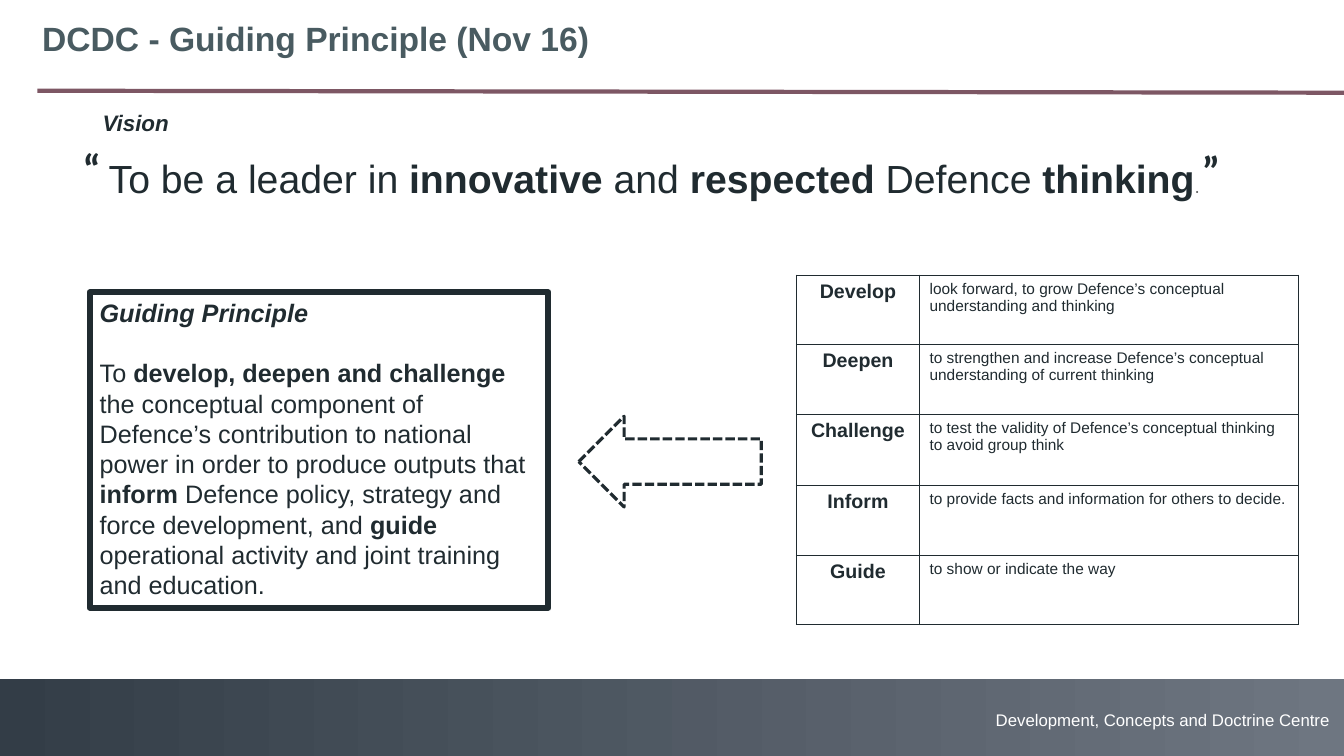
from dataclasses import dataclass

from lxml.etree import SubElement
from pptx import Presentation
from pptx.dml.color import RGBColor
from pptx.enum.dml import MSO_LINE
from pptx.enum.shapes import MSO_CONNECTOR, MSO_SHAPE
from pptx.enum.text import MSO_ANCHOR, PP_ALIGN
from pptx.oxml.ns import qn
from pptx.util import Emu, Pt


@dataclass(frozen=True)
class Theme:
    ink: str = "202B30"
    title: str = "495B61"
    rule: str = "7D5764"
    stop: str = "6D6D6D"
    band_left: str = "333D47"
    band_right: str = "6E7681"
    white: str = "FFFFFF"
    font: str = "Arial"
    quote_font: str = "Calibri"
    title_pt: float = 24
    vision_pt: float = 28
    stop_pt: float = 13.5
    quote_pt: float = 30
    label_pt: float = 16
    body_pt: float = 18
    term_pt: float = 14
    meaning_pt: float = 11
    footer_pt: float = 12


T = Theme()
PX = 9144  # 100 px to the inch

VISION = "To be a leader in **innovative** and **respected** Defence **thinking**"
PRINCIPLE = (
    "To **develop, deepen and challenge** the conceptual component of Defence’s "
    "contribution to national power in order to produce outputs that **inform **"
    "Defence policy, strategy and force development, and **guide **operational "
    "activity and joint training and education."
)
TERMS = [
    ("Develop", "look forward, to grow Defence’s conceptual understanding and thinking"),
    ("Deepen", "to strengthen and increase Defence’s conceptual understanding of current thinking"),
    ("Challenge", "to test the validity of Defence’s conceptual thinking to avoid group think"),
    ("Inform", "to provide facts and information for others to decide."),
    ("Guide", "to show or indicate the way"),
]
COLUMN_WIDTHS = (122, 376)
ROW_HEIGHTS = (69, 69, 71, 69, 69)


def px(*lengths):
    return [Emu(n * PX) for n in lengths]


def rgb(color):
    return RGBColor.from_string(color)


def set_all(target, values):
    for name, value in values.items():
        setattr(target, name, value)


def add_run(p, text, size, color=T.ink, font=T.font, bold=False, italic=False):
    r = p.add_run()
    r.text = text
    set_all(r.font, dict(size=Pt(size), name=font, bold=bold, italic=italic))
    r.font.color.rgb = rgb(color)


def add_marked_runs(p, text, size):
    """Add runs to p; parts between double asterisks are bold."""
    for i, part in enumerate(text.split("**")):
        if part:
            add_run(p, part, size, bold=i % 2 == 1)


def add_text(s, box, anchor=MSO_ANCHOR.TOP):
    """Add a wrapping text box and return it with its first paragraph."""
    sp = s.shapes.add_textbox(*px(*box))
    set_all(sp.text_frame, dict(word_wrap=True, vertical_anchor=anchor))
    return sp, sp.text_frame.paragraphs[0]


def add_box(s, kind, box, line=None, fill=None):
    sp = s.shapes.add_shape(kind, *px(*box))
    sp.shadow.inherit = False
    if fill:
        sp.fill.solid()
        sp.fill.fore_color.rgb = rgb(fill)
    else:
        sp.fill.background()
    if line:
        sp.line.color.rgb = rgb(T.ink)
        sp.line.width = Pt(line)
    else:
        sp.line.fill.background()
    return sp


def add_footer(s):
    band = add_box(s, MSO_SHAPE.RECTANGLE, (0, 674, 1333, 76))
    band.fill.gradient()
    band.fill.gradient_angle = 0
    for stop, color in zip(band.fill.gradient_stops, (T.band_left, T.band_right)):
        stop.color.rgb = rgb(color)
    _, p = add_text(s, (0, 699, 1329, 30), MSO_ANCHOR.MIDDLE)
    p.alignment = PP_ALIGN.RIGHT
    add_run(p, "Development, Concepts and Doctrine Centre", T.footer_pt, T.white)


def add_header(s):
    rule = s.shapes.add_connector(MSO_CONNECTOR.STRAIGHT, *px(37, 90, 1333, 92))
    rule.line.color.rgb = rgb(T.rule)
    rule.line.width = Pt(3)
    SubElement(rule._element.spPr, qn("a:effectLst"))
    _, p = add_text(s, (32, 13, 1084, 79))
    add_run(p, "DCDC - Guiding Principle (Nov 16)", T.title_pt, T.title, bold=True)


def add_vision(s):
    _, p = add_text(s, (92, 103, 94, 37))
    add_run(p, "Vision", T.label_pt, bold=True, italic=True)
    _, p = add_text(s, (98, 148, 1122, 57))
    add_marked_runs(p, VISION, T.vision_pt)
    add_run(p, ".", T.stop_pt, T.stop)
    for box, turn in (((72, 136, 98, 61), 0), ((1131, 122, 89, 61), 180)):
        sp, p = add_text(s, box)
        sp.rotation = turn
        add_run(p, "“", T.quote_pt, font=T.quote_font, bold=True)


def add_principle(s):
    sp = add_box(s, MSO_SHAPE.RECTANGLE, (89, 290, 455, 313), line=4.25)
    tf = sp.text_frame
    set_all(tf, dict(word_wrap=True, vertical_anchor=MSO_ANCHOR.TOP))
    heading, body = tf.paragraphs[0], tf.add_paragraph()
    heading.alignment = body.alignment = PP_ALIGN.LEFT
    body.space_before = Pt(21.6)
    add_run(heading, "Guiding Principle", T.body_pt, bold=True, italic=True)
    add_marked_runs(body, PRINCIPLE, T.body_pt)


def add_borders(cell):
    tc_pr = cell._tc.get_or_add_tcPr()
    for side in ("lnL", "lnR", "lnT", "lnB"):
        ln = SubElement(tc_pr, qn(f"a:{side}"), w=str(Pt(1)))
        fill = SubElement(ln, qn("a:solidFill"))
        SubElement(fill, qn("a:srgbClr"), val=T.ink)


def add_terms(s):
    box = (790, 273, sum(COLUMN_WIDTHS), sum(ROW_HEIGHTS))
    table = s.shapes.add_table(len(TERMS), len(COLUMN_WIDTHS), *px(*box)).table
    set_all(table, dict(first_row=False, horz_banding=False))
    for column, width in zip(table.columns, px(*COLUMN_WIDTHS)):
        column.width = width
    for row, height, texts in zip(table.rows, px(*ROW_HEIGHTS), TERMS):
        row.height = height
        for cell, text, size in zip(row.cells, texts, (T.term_pt, T.meaning_pt)):
            is_term = size == T.term_pt
            add_borders(cell)
            cell.fill.background()
            p = cell.text_frame.paragraphs[0]
            p.alignment = PP_ALIGN.CENTER if is_term else PP_ALIGN.LEFT
            add_run(p, text, size, bold=is_term)


def add_arrow(s):
    arrow = add_box(s, MSO_SHAPE.LEFT_ARROW, (574, 413, 181, 90), line=2.25, fill=T.white)
    arrow.line.dash_style = MSO_LINE.SQUARE_DOT


def main():
    prs = Presentation()
    prs.slide_width, prs.slide_height = px(1333, 750)
    s = prs.slides.add_slide(prs.slide_layouts[6])
    for add_part in (add_footer, add_header, add_vision, add_principle, add_terms, add_arrow):
        add_part(s)
    prs.save("out.pptx")


if __name__ == "__main__":
    main()
